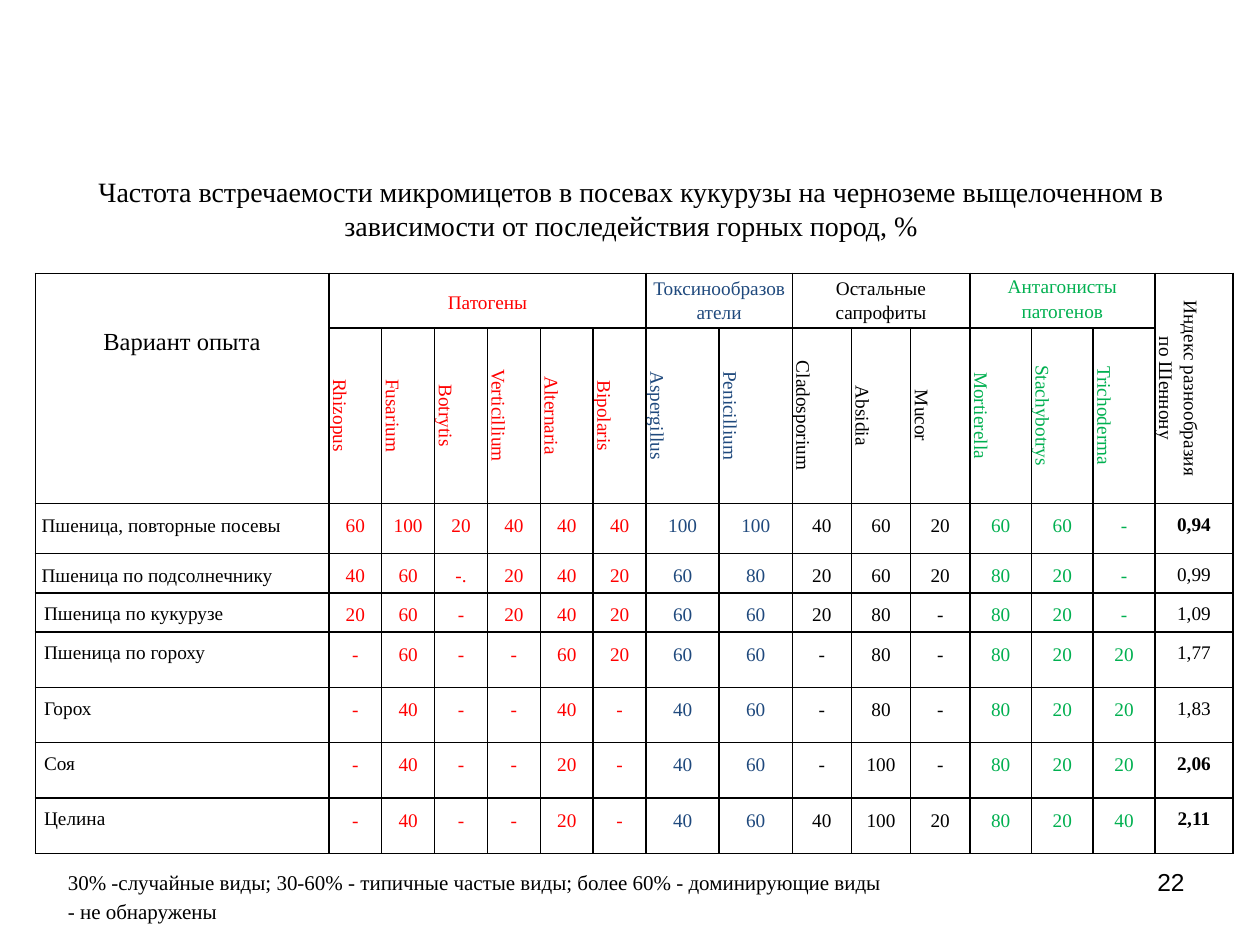
from dataclasses import dataclass

from lxml import etree
from pptx import Presentation
from pptx.dml.color import RGBColor
from pptx.enum.text import MSO_ANCHOR, MSO_AUTO_SIZE, PP_ALIGN
from pptx.oxml.ns import qn
from pptx.util import Inches, Pt

LEFT, CENTER, RIGHT = PP_ALIGN.LEFT, PP_ALIGN.CENTER, PP_ALIGN.RIGHT
TOP, MIDDLE = MSO_ANCHOR.TOP, MSO_ANCHOR.MIDDLE
NO_AUTOFIT = MSO_AUTO_SIZE.NONE
SERIF, SANS = "Times New Roman", "Arial"
BLACK, RED, BLUE, GREEN = "000000", "FF0000", "1F497D", "00B050"

NORMAL_INSETS = (0.05, 0.01, 0.05, 0)
LABEL_INSETS = (0.07, 0, 0.07, 0)
NO_INSETS = (0, 0, 0, 0)
LABEL_WIDTH, INDEX_WIDTH = 2.33, 0.62
ROW_HEIGHTS = [0.42, 1.15, 0.4, 0.31, 0.31] + [0.44] * 4


@dataclass
class GenusGroup:
    heading: list[str]
    color: str
    column_width: float
    genera: list[str]
    anchor: MSO_ANCHOR = TOP
    insets: tuple = NORMAL_INSETS


@dataclass
class Variant:
    name: str
    frequencies: str
    diversity: str
    bold: bool = False
    insets: tuple = LABEL_INSETS


@dataclass
class TextStyle:
    size: float = 11
    color: str = BLACK
    align: PP_ALIGN = CENTER
    spacing: float = 1.15
    bold: bool = False
    font: str = SERIF


GROUPS = [
    GenusGroup(["Патогены"], RED, 0.42,
               ["Rhizopus", "Fusarium", "Botrytis", "Verticillium", "Alternaria", "Bipolaris"],
               anchor=MIDDLE),
    GenusGroup(["Токсинообразователи"], BLUE, 0.58, ["Aspergillus", "Penicillium"]),
    GenusGroup(["Остальные сапрофиты"], BLACK, 0.47, ["Cladosporium", "Absidia", "Mucor"]),
    GenusGroup(["Антагонисты", "патогенов"], GREEN, 0.49,
               ["Mortierella", "Stachybotrys", "Trichoderma"], insets=NO_INSETS),
]

VARIANTS = [
    Variant("Пшеница, повторные посевы", "60 100 20 40 40 40 100 100 40 60 20 60 60 -",
            "0,94", True, NORMAL_INSETS),
    Variant("Пшеница по подсолнечнику", "40 60 -. 20 40 20 60 80 20 60 20 80 20 -",
            "0,99", False, NORMAL_INSETS),
    Variant("Пшеница по кукурузе", "20 60 - 20 40 20 60 60 20 80 - 80 20 -", "1,09"),
    Variant("Пшеница по гороху", "- 60 - - 60 20 60 60 - 80 - 80 20 20", "1,77"),
    Variant("Горох", "- 40 - - 40 - 40 60 - 80 - 80 20 20", "1,83"),
    Variant("Соя", "- 40 - - 20 - 40 60 - 100 - 80 20 20", "2,06", True),
    Variant("Целина", "- 40 - - 20 - 40 60 40 100 20 80 20 40", "2,11", True),
]


def rgb(color: str) -> RGBColor:
    return RGBColor.from_string(color)


def write(frame, lines: list[str], style: TextStyle) -> None:
    """Fill a text frame with one paragraph per line."""
    for index, line in enumerate(lines):
        para = frame.add_paragraph() if index else frame.paragraphs[0]
        para.alignment = style.align
        para.line_spacing = style.spacing
        span = para.add_run()
        span.text = line
        span.font.name = style.font
        span.font.size = Pt(style.size)
        span.font.bold = style.bold
        span.font.color.rgb = rgb(style.color)


def write_cell(cell, lines: list[str], style: TextStyle, insets: tuple = NORMAL_INSETS,
               anchor: MSO_ANCHOR = TOP, vertical: bool = False) -> None:
    cell.margin_left, cell.margin_top, cell.margin_right, cell.margin_bottom = map(Inches, insets)
    cell.vertical_anchor = anchor
    if vertical:
        cell._tc.get_or_add_tcPr().set("vert", "vert")
    write(cell.text_frame, lines, style)


def outline_cell(cell) -> None:
    """Draw a thin black border on every side and clear the fill."""
    properties = cell._tc.get_or_add_tcPr()
    for side in ("a:lnL", "a:lnR", "a:lnT", "a:lnB"):
        line = etree.SubElement(properties, qn(side), w=str(Pt(1)))
        fill = etree.SubElement(line, qn("a:solidFill"))
        etree.SubElement(fill, qn("a:srgbClr"), val=BLACK)
    cell.fill.background()


def add_text_box(page, place: tuple, lines: list[str], style: TextStyle) -> None:
    box = page.shapes.add_textbox(*map(Inches, place))
    box.text_frame.word_wrap = True
    write(box.text_frame, lines, style)


def add_title(page, text: str) -> None:
    title = page.shapes.title
    title.left, title.top, title.width, title.height = map(Inches, (0.51, 1.23, 9, 0.85))
    frame = title.text_frame
    frame.word_wrap = True
    frame.auto_size = NO_AUTOFIT
    frame.vertical_anchor = MIDDLE
    write(frame, [text], TextStyle(size=16, spacing=1.0))


def add_frequency_table(page) -> None:
    genus_widths = [group.column_width for group in GROUPS for _ in group.genera]
    genus_colors = [group.color for group in GROUPS for _ in group.genera]
    widths = [LABEL_WIDTH, *genus_widths, INDEX_WIDTH]
    table = page.shapes.add_table(
        len(ROW_HEIGHTS), len(widths), Inches(0.28), Inches(2.17),
        Inches(sum(widths)), Inches(sum(ROW_HEIGHTS))).table
    table.first_row = table.horz_banding = False
    for column, width in zip(table.columns, widths):
        column.width = Inches(width)
    for row, height in zip(table.rows, ROW_HEIGHTS):
        row.height = Inches(height)
    for cell in table.iter_cells():
        outline_cell(cell)

    index_column = len(widths) - 1
    for column in (0, index_column):
        table.cell(0, column).merge(table.cell(1, column))
    write_cell(table.cell(0, 0), ["Вариант опыта"], TextStyle(size=14), (0.05, 0.41, 0.05, 0))
    write_cell(table.cell(0, index_column), ["Индекс разнообразия", "по Шеннону"],
               TextStyle(), NO_INSETS, vertical=True)

    start = 1
    for group in GROUPS:
        style = TextStyle(color=group.color)
        end = start + len(group.genera)
        table.cell(0, start).merge(table.cell(0, end - 1))
        write_cell(table.cell(0, start), group.heading, style, group.insets, group.anchor)
        for column, genus in enumerate(group.genera, start):
            write_cell(table.cell(1, column), [genus], style, anchor=MIDDLE, vertical=True)
        start = end

    for row, variant in enumerate(VARIANTS, 2):
        write_cell(table.cell(row, 0), [variant.name],
                   TextStyle(align=LEFT, spacing=1.5), variant.insets)
        values = zip(variant.frequencies.split(), genus_colors)
        for column, (value, color) in enumerate(values, 1):
            write_cell(table.cell(row, column), [value], TextStyle(color=color, spacing=1.5))
        write_cell(table.cell(row, index_column), [variant.diversity],
                   TextStyle(spacing=1.5, bold=variant.bold), NO_INSETS)


def main() -> None:
    deck = Presentation()
    deck.slide_width, deck.slide_height = Inches(10), Inches(7.5)
    page = deck.slides.add_slide(deck.slide_layouts[5])
    add_title(page, "Частота встречаемости микромицетов в посевах кукурузы на черноземе "
                    "выщелоченном в зависимости от последействия горных пород, %")
    add_text_box(page, (7.17, 6.83, 2.33, 0.52), ["22"],
                 TextStyle(size=14, align=RIGHT, spacing=1.0, font=SANS))
    add_frequency_table(page)
    add_text_box(page, (0.44, 6.82, 8.51, 0.57),
                 ["30% -случайные виды; 30-60% - типичные частые виды; "
                  "более 60% - доминирующие виды", "- не обнаружены"],
                 TextStyle(size=12, align=LEFT))
    deck.save("out.pptx")


if __name__ == "__main__":
    main()
